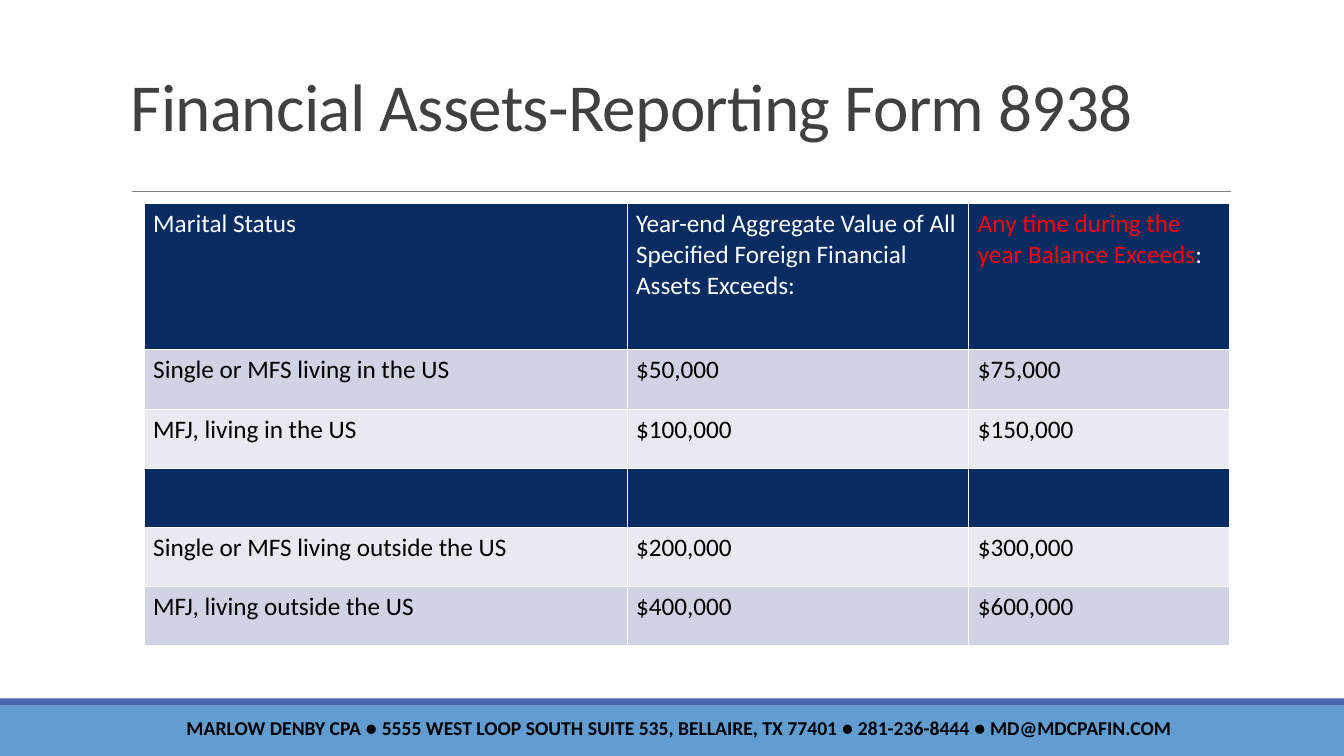
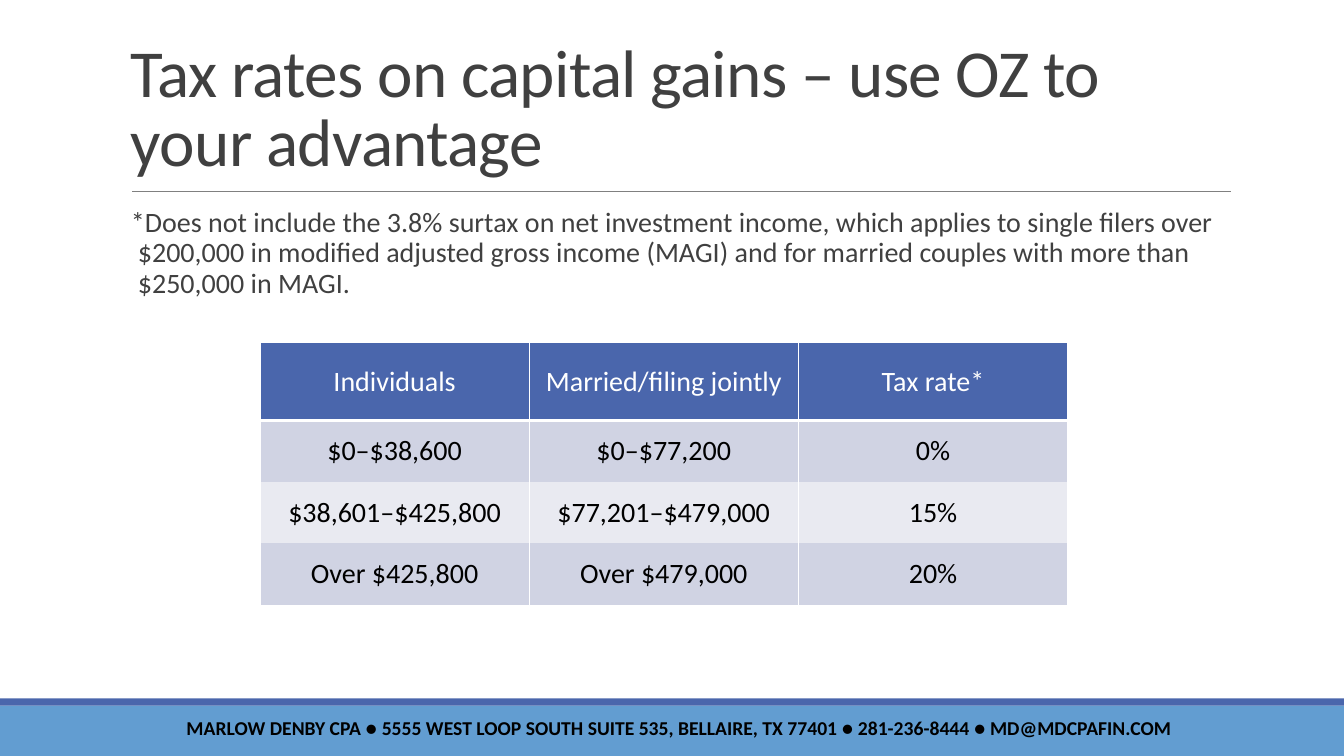
from dataclasses import dataclass

from lxml import etree
from pptx import Presentation
from pptx.dml.color import RGBColor
from pptx.enum import shapes, text
from pptx.oxml import ns
from pptx.util import Inches, Pt

# Shared style
FONT = "Calibri"
WHITE, BLACK, RED = "FFFFFF", "000000", "FF0000"
GREY, RULE = "404040", "808080"
NAVY, BLUE, SKY = "072C62", "4A66AC", "629DD1"
BAND_DARK, BAND_LIGHT = "D0D3E3", "E9EAF1"
SLIDE_W, SLIDE_H = 13.33, 7.5
FOOTER = ("MARLOW DENBY CPA ● 5555 WEST LOOP SOUTH SUITE 535, BELLAIRE, "
          "TX 77401 ● 281-236-8444 ● MD@MDCPAFIN.COM")
LEFT, CENTER = text.PP_ALIGN.LEFT, text.PP_ALIGN.CENTER
TOP, MIDDLE = text.MSO_ANCHOR.TOP, text.MSO_ANCHOR.MIDDLE


@dataclass
class Row:
    """A table row; a cell given as a tuple holds (text, colour) runs."""
    height: float
    fill: str
    cells: tuple
    color: str = BLACK


@dataclass
class TableStyle:
    size: float
    align: text.PP_ALIGN
    anchor: text.MSO_ANCHOR
    margin: float
    column_line: float
    row_line: float
    header_line: float


def rgb(color: str) -> RGBColor:
    return RGBColor.from_string(color)


def style_run(r, size: float, color: str, bold: bool = False) -> None:
    r.font.name, r.font.size, r.font.bold = FONT, Pt(size), bold
    r.font.color.rgb = rgb(color)


def add_text(s, box: tuple, content: str, size: float, color: str,
             anchor=TOP, bold: bool = False):
    """Add a one-paragraph text box and return its paragraph."""
    tf = s.shapes.add_textbox(*map(Inches, box)).text_frame
    tf.word_wrap = True
    tf.vertical_anchor = anchor
    tf.text = content
    p = tf.paragraphs[0]
    style_run(p.runs[0], size, color, bold)
    return p


def add_band(s, top: float, height: float, color: str) -> None:
    sp = s.shapes.add_shape(shapes.MSO_SHAPE.RECTANGLE, 0, Inches(top),
                            Inches(SLIDE_W), Inches(height))
    sp.shadow.inherit = False
    sp.fill.solid()
    sp.fill.fore_color.rgb = rgb(color)
    sp.line.fill.background()


def add_base(prs, title: str):
    """Add a slide with its bands, rule, title and footer."""
    s = prs.slides.add_slide(prs.slide_layouts[6])
    add_band(s, 7, 0.5, SKY)
    add_band(s, 6.93, 0.07, BLUE)

    rule = s.shapes.add_connector(shapes.MSO_CONNECTOR.STRAIGHT, Inches(1.31),
                                  Inches(1.9), Inches(12.21), Inches(1.9))
    rule.line.color.rgb = rgb(RULE)
    rule.line.width = Pt(0.5)
    etree.SubElement(rule._element.spPr, ns.qn("a:effectLst"))

    p = add_text(s, (1.2, 0.31, 11, 1.59), title, 48, GREY, MIDDLE)
    p.line_spacing = 0.85
    p.runs[0].font._element.set("spc", "-50")

    p = add_text(s, (0.92, 6.98, 11.64, 0.47), FOOTER, 14, BLACK, MIDDLE, True)
    p.alignment = CENTER
    return s


def set_borders(cell, widths: dict) -> None:
    """Draw white cell borders; a zero width leaves the side open."""
    tc_pr = cell._tc.get_or_add_tcPr()
    for side, width in widths.items():
        ln = etree.SubElement(tc_pr, ns.qn(f"a:ln{side}"), w=str(Pt(width)))
        if width:
            fill = etree.SubElement(ln, ns.qn("a:solidFill"))
            etree.SubElement(fill, ns.qn("a:srgbClr"), val=WHITE)
        else:
            etree.SubElement(ln, ns.qn("a:noFill"))


def fill_cell(cell, content, row: Row, style: TableStyle) -> None:
    cell.fill.solid()
    cell.fill.fore_color.rgb = rgb(row.fill)
    cell.vertical_anchor = style.anchor
    cell.margin_left = cell.margin_right = Inches(style.margin)
    cell.margin_top = cell.margin_bottom = Inches(0.05)
    p = cell.text_frame.paragraphs[0]
    p.alignment = style.align
    p.font.size = Pt(style.size)
    runs = content if isinstance(content, tuple) else ((content, row.color),)
    for words, color in runs:
        if words:
            r = p.add_run()
            r.text = words
            style_run(r, style.size, color)


def add_table(s, left: float, top: float, widths: list[float],
              rows: list[Row], style: TableStyle) -> None:
    height = sum(row.height for row in rows)
    table = s.shapes.add_table(len(rows), len(widths), Inches(left), Inches(top),
                               Inches(sum(widths)), Inches(height)).table
    table.first_row = table.horz_banding = False
    for column, width in zip(table.columns, widths):
        column.width = Inches(width)
    for i, row in enumerate(rows):
        table.rows[i].height = Inches(row.height)
        above = style.header_line if i == 1 else style.row_line
        below = style.header_line if i == 0 else style.row_line
        for j, content in enumerate(row.cells):
            cell = table.cell(i, j)
            set_borders(cell, {"L": style.column_line, "R": style.column_line,
                               "T": above, "B": below})
            fill_cell(cell, content, row, style)


def build_reporting(prs) -> None:
    s = add_base(prs, "Financial Assets-Reporting Form 8938")
    rows = [
        Row(1.45, NAVY, (
            "Marital Status",
            "Year-end Aggregate Value of All Specified Foreign Financial "
            "Assets Exceeds:",
            (("Any time during the year Balance Exceeds", RED), (":", WHITE)),
        ), WHITE),
        Row(0.59, BAND_DARK, ("Single or MFS living in the US", "$50,000", "$75,000")),
        Row(0.59, BAND_LIGHT, ("MFJ, living in the US", "$100,000", "$150,000")),
        Row(0.58, NAVY, ("", "", "")),
        Row(0.59, BAND_LIGHT,
            ("Single or MFS living outside the US", "$200,000", "$300,000")),
        Row(0.59, BAND_DARK, ("MFJ, living outside the US", "$400,000", "$600,000")),
    ]
    style = TableStyle(18, LEFT, TOP, 0.09, column_line=1, row_line=1, header_line=1)
    add_table(s, 1.43, 2.02, [4.79, 3.39, 2.59], rows, style)


def build_tax_rates(prs) -> None:
    s = add_base(prs, "Tax rates on capital gains – use OZ to your advantage")

    # Footnote with a small hanging indent
    p = add_text(
        s, (1.2, 2.02, 11, 1.2),
        "*Does not include the 3.8% surtax on net investment income, which "
        "applies to single filers over $200,000 in modified adjusted gross "
        "income (MAGI) and for married couples with more than $250,000 in MAGI.",
        20, GREY)
    p.line_spacing, p.space_before, p.space_after = 0.9, Pt(12), Pt(2)
    p_pr = p._p.get_or_add_pPr()
    p_pr.set("marL", str(Inches(0.07)))
    p_pr.set("indent", str(Inches(-0.07)))

    # Rates by income bracket
    rows = [
        Row(0.77, BLUE, ("Individuals", "Married/filing jointly", "Tax rate*"), WHITE),
        Row(0.61, BAND_DARK, ("$0–$38,600", "$0–$77,200", "0%")),
        Row(0.61, BAND_LIGHT, ("$38,601–$425,800", "$77,201–$479,000", "15%")),
        Row(0.61, BAND_DARK, ("Over $425,800", "Over $479,000", "20%")),
    ]
    style = TableStyle(20, CENTER, MIDDLE, 0.1, column_line=0.75, row_line=0,
                       header_line=2.25)
    add_table(s, 2.58, 3.4, [2.67] * 3, rows, style)


def main() -> None:
    prs = Presentation()
    prs.slide_width, prs.slide_height = Inches(SLIDE_W), Inches(SLIDE_H)
    build_reporting(prs)
    build_tax_rates(prs)
    prs.save("out.pptx")


if __name__ == "__main__":
    main()
